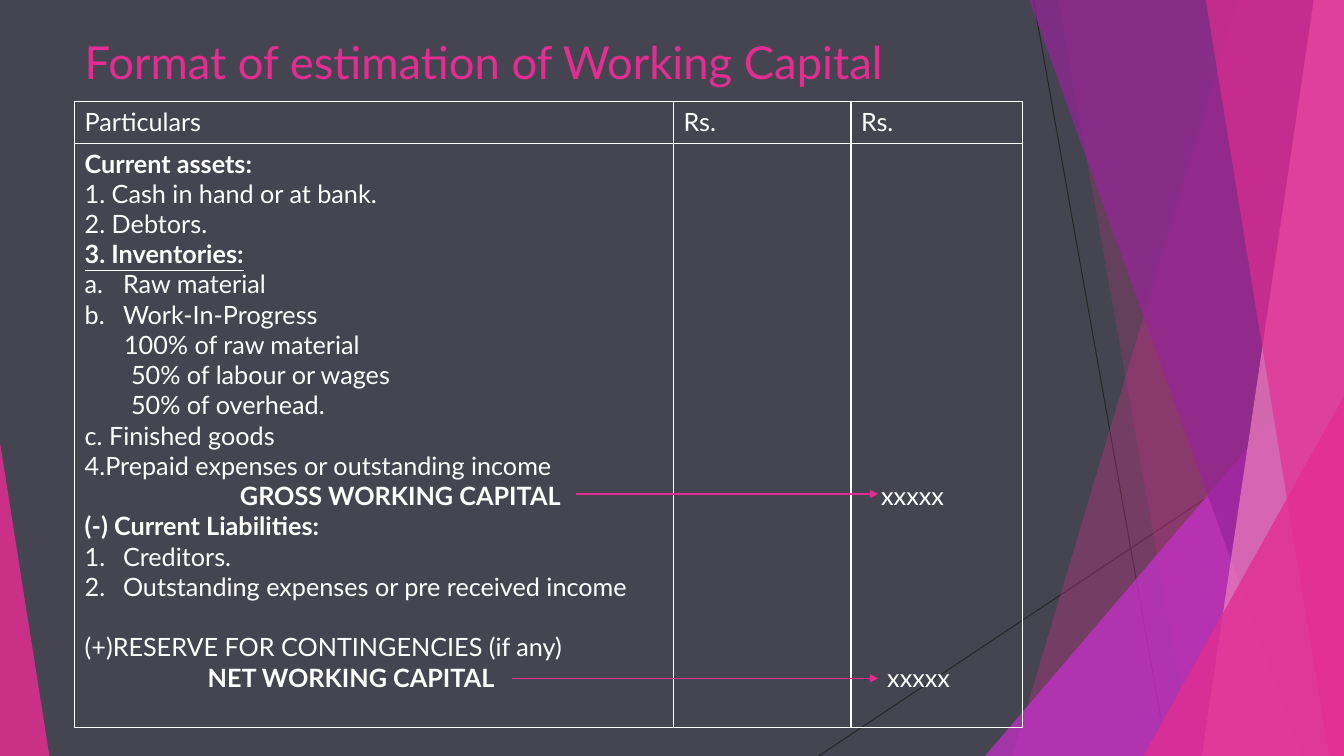
from dataclasses import dataclass

from lxml import etree
from pptx import Presentation
from pptx.dml.color import RGBColor
from pptx.enum.shapes import MSO_CONNECTOR, MSO_SHAPE
from pptx.enum.text import MSO_ANCHOR, MSO_AUTO_SIZE, PP_ALIGN
from pptx.oxml.ns import qn
from pptx.util import Pt

PX = 9144  # EMU per px, 100 px to the inch
WIDTH, HEIGHT = 1333, 750
STRAIGHT = MSO_CONNECTOR.STRAIGHT
TRIANGLE = MSO_SHAPE.ISOSCELES_TRIANGLE
TOP, LEFT, NO_FIT = MSO_ANCHOR.TOP, PP_ALIGN.LEFT, MSO_AUTO_SIZE.NONE


@dataclass(frozen=True)
class Theme:
    background: str = "454551"
    text: str = "FFFFFF"
    accent: str = "E32D91"
    light: str = "EE81BD"
    purple: str = "C830CC"
    dark_purple: str = "962499"
    hairline: str = "262626"
    font: str = "Lato"
    title_size: float = 32.4
    body_size: float = 18
    line_height: float = 21.6


@dataclass(frozen=True)
class Band:
    """Facet running to the right edge, with a slanted left side."""
    top_x: int
    bottom_x: int
    color: str
    opacity: int


@dataclass(frozen=True)
class Corner:
    """Right triangle whose apex sits at one end of its base."""
    x: int
    y: int
    width: int
    apex: float
    color: str
    opacity: int


@dataclass(frozen=True)
class Rule:
    start: tuple[int, int]
    end: tuple[int, int]
    color: str
    weight: float
    arrow: bool = False


@dataclass(frozen=True)
class Line:
    text: str
    bold: bool = False
    underline: bool = False
    indent: int = 0
    numbering: str = ""
    blank_before: int = 0


T = Theme()

HAIRLINES = [
    Rule((1025, 0), (1158, 750), T.hairline, 0.75),
    Rule((1333, 403), (812, 750), T.hairline, 0.75),
]
FACETS = [
    Band(1228, 1004, T.accent, 30),
    Band(1050, 1183, T.accent, 20),
    Corner(977, 333, 356, 1, T.purple, 72),
    Band(1021, 1291, T.dark_purple, 70),
    Band(1303, 1192, T.light, 70),
    Band(1196, 1318, T.accent, 65),
    Corner(1134, 393, 199, 1, T.accent, 80),
    Corner(0, 439, 49, 0, T.accent, 85),
]
ARROWS = [
    Rule((508, 673), (871, 673), T.accent, 1, arrow=True),
    Rule((571, 490), (871, 490), T.accent, 1, arrow=True),
]

TITLE = "Format of estimation of Working Capital"
COLUMNS, ROWS = [594, 176, 170], [41, 580]
HEADERS = ["Particulars", "Rs.", "Rs."]
LETTERS, NUMBERS = "alphaLcPeriod", "arabicPeriod"
PARTICULARS = [
    Line("Current assets:", bold=True),
    Line("1. Cash in hand or at bank."),
    Line("2. Debtors."),
    Line("3. Inventories:", bold=True, underline=True),
    Line("Raw material", indent=38, numbering=LETTERS),
    Line("Work-In-Progress", indent=38, numbering=LETTERS),
    Line("100% of raw material", indent=39),
    Line("50% of labour or wages", indent=46),
    Line("50% of overhead.", indent=46),
    Line("c. Finished goods"),
    Line("4.Prepaid expenses or outstanding income"),
    Line("GROSS WORKING CAPITAL", bold=True, indent=154),
    Line("(-) Current Liabilities:", bold=True),
    Line("Creditors.", indent=38, numbering=NUMBERS),
    Line("Outstanding expenses or pre received income", indent=38, numbering=NUMBERS),
    Line("(+)RESERVE FOR CONTINGENCIES (if any)", blank_before=1),
    Line("NET WORKING CAPITAL", bold=True, indent=122),
]
TOTALS = [Line("xxxxx", indent=20), Line("xxxxx", indent=26, blank_before=5)]
TOTALS_TOP = 335  # level with the gross working capital line


def rgb(color: str) -> RGBColor:
    return RGBColor.from_string(color)


def format_font(font, **extra) -> None:
    values = {"name": T.font, "size": Pt(T.body_size)} | extra
    color = values.pop("color", T.text)
    for name, value in values.items():
        setattr(font, name, value)
    font.color.rgb = rgb(color)


def draw_rule(s, rule: Rule) -> None:
    ends = [v * PX for v in (*rule.start, *rule.end)]
    line = s.shapes.add_connector(STRAIGHT, *ends)
    line.line.color.rgb = rgb(rule.color)
    line.line.width = Pt(rule.weight)
    if rule.arrow:
        etree.SubElement(line.line._get_or_add_ln(), qn("a:tailEnd"), type="triangle")
    etree.SubElement(line._element.spPr, qn("a:effectLst"))


def draw_facet(s, facet: Band | Corner) -> None:
    if isinstance(facet, Band):
        builder = s.shapes.build_freeform(facet.top_x, 0, scale=PX)
        builder.add_line_segments([(WIDTH, 0), (WIDTH, HEIGHT), (facet.bottom_x, HEIGHT)])
        shape = builder.convert_to_shape()
    else:
        box = (facet.x, facet.y, facet.width, HEIGHT - facet.y)
        shape = s.shapes.add_shape(TRIANGLE, *(v * PX for v in box))
        shape.adjustments[0] = facet.apex
    shape.shadow.inherit = False
    shape.line.fill.background()
    shape.fill.solid()
    shape.fill.fore_color.rgb = rgb(facet.color)
    color = shape._element.spPr.find(".//" + qn("a:srgbClr"))
    etree.SubElement(color, qn("a:alpha"), val=str(facet.opacity * 1000))


def write_lines(tf, lines: list[Line]) -> None:
    for i, line in enumerate(lines):
        p = tf.paragraphs[0] if i == 0 else tf.add_paragraph()
        p.space_before = Pt(line.blank_before * T.line_height)
        pPr = p._p.get_or_add_pPr()
        pPr.set("marL", str(line.indent * PX))
        if line.numbering:
            pPr.set("indent", str(-line.indent * PX))
            etree.SubElement(pPr, qn("a:buFont"), typeface="+mj-lt")
            etree.SubElement(pPr, qn("a:buAutoNum"), type=line.numbering)
        r = p.add_run()
        r.text = line.text
        format_font(r.font, bold=line.bold, underline=line.underline)


def format_cell(cell) -> None:
    tcPr = cell._tc.get_or_add_tcPr()
    for side in ("lnL", "lnR", "lnT", "lnB"):
        ln = etree.SubElement(tcPr, qn(f"a:{side}"), w=str(Pt(1)))
        fill = etree.SubElement(ln, qn("a:solidFill"))
        etree.SubElement(fill, qn("a:srgbClr"), val=T.text)
    cell.fill.background()


def draw_table(s) -> None:
    box = (74, 101, sum(COLUMNS), sum(ROWS))
    table = s.shapes.add_table(len(ROWS), len(COLUMNS), *(v * PX for v in box)).table
    table.first_row = table.horz_banding = False
    for column, width in zip(table.columns, COLUMNS):
        column.width = width * PX
    for row, height in zip(table.rows, ROWS):
        row.height = height * PX
    for cell in table.iter_cells():
        format_cell(cell)
    for i, header in enumerate(HEADERS):
        write_lines(table.cell(0, i).text_frame, [Line(header)])
    write_lines(table.cell(1, 0).text_frame, PARTICULARS)
    totals = table.cell(1, 2)
    totals.margin_top = TOTALS_TOP * PX
    write_lines(totals.text_frame, TOTALS)


def draw_title(s) -> None:
    title = s.shapes.title
    box = {"left": 74, "top": 29, "width": 940, "height": 53}
    for name, value in box.items():
        setattr(title, name, value * PX)
    tf = title.text_frame
    tf.text = TITLE
    for name, value in {"word_wrap": True, "auto_size": NO_FIT, "vertical_anchor": TOP}.items():
        setattr(tf, name, value)
    p = tf.paragraphs[0]
    p.alignment = LEFT
    format_font(p.runs[0].font, size=Pt(T.title_size), color=T.accent)


def main() -> None:
    prs = Presentation()
    prs.slide_width, prs.slide_height = WIDTH * PX, HEIGHT * PX
    s = prs.slides.add_slide(prs.slide_layouts[5])
    s.background.fill.solid()
    s.background.fill.fore_color.rgb = rgb(T.background)
    # Backdrop
    for rule in HAIRLINES:
        draw_rule(s, rule)
    for facet in FACETS:
        draw_facet(s, facet)
    # Content
    draw_title(s)
    draw_table(s)
    for arrow in ARROWS:
        draw_rule(s, arrow)
    prs.save("out.pptx")


if __name__ == "__main__":
    main()
